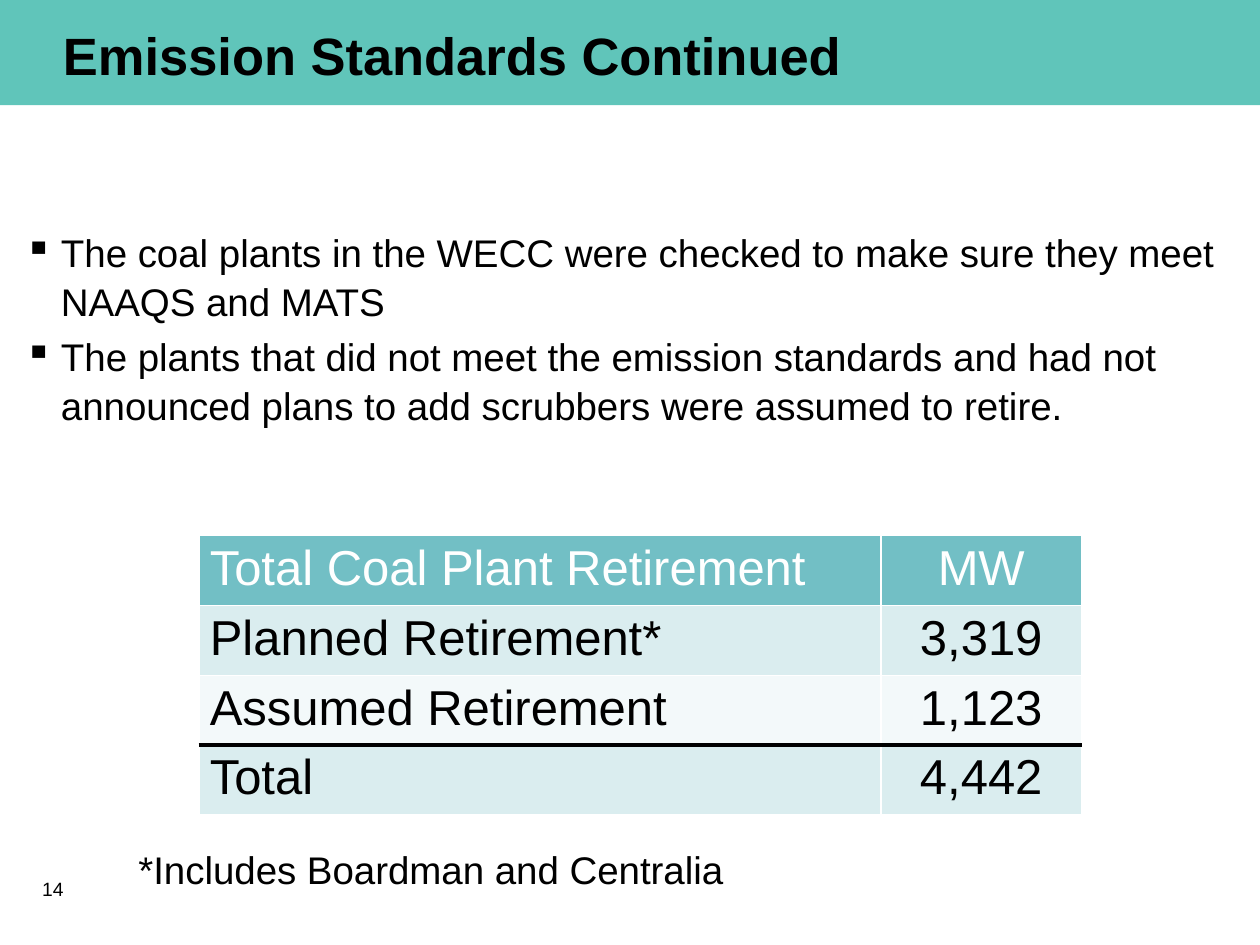
import pptx
import pptx.dml.color
import pptx.enum.shapes
import pptx.enum.text
import pptx.oxml
import pptx.oxml.ns
import pptx.util
from lxml import etree
from pptx.util import Cm

TITLE = "Emission Standards Continued"
BULLETS = [
    "The coal plants in the WECC were checked to make sure they meet NAAQS and MATS",
    "The plants that did not meet the emission standards and had not announced plans to add scrubbers were assumed to retire.",
]
RETIREMENTS = [
    ("Total Coal Plant Retirement", "MW"),
    ("Planned Retirement*", "3,319"),
    ("Assumed Retirement", "1,123"),
    ("Total", "4,442"),
]
FOOTNOTE = "*Includes Boardman and Centralia"
PAGE_NUMBER = "14"

THEME = {
    "font": "Arial",
    "text": "000000",
    "white": "FFFFFF",
    "banner": "60C5BA",
    "header": "72BFC5",
    "bands": ("DAEDEF", "F3F9FA"),
    "title_size": 30,
    "table_size": 28,
    "body_size": 22,
    "number_size": 11,
}
INSETS = (Cm(0.21), Cm(0.11))
COLUMN_WIDTHS = (Cm(13.74), Cm(4.04))
ROW_HEIGHT = Cm(1.35)
BULLET_INDENT = Cm(0.74)
MIDDLE = pptx.enum.text.MSO_ANCHOR.MIDDLE


def color(name):
    return pptx.dml.color.RGBColor.from_string(name)


def style(paragraph, size, ink=THEME["text"], bold=False):
    paragraph.font.name = THEME["font"]
    paragraph.font.size = pptx.util.Pt(size)
    paragraph.font.color.rgb = color(ink)
    paragraph.font.bold = bold


def set_insets(target, insets):
    target.margin_left = target.margin_right = insets[0]
    target.margin_top = target.margin_bottom = insets[1]


def add_text(slide, box, lines, size, bold=False, insets=INSETS, anchor=None):
    frame = slide.shapes.add_textbox(*map(Cm, box)).text_frame
    frame.word_wrap = True
    frame.vertical_anchor = anchor
    set_insets(frame, insets)
    frame.text = "\n".join(lines)
    for paragraph in frame.paragraphs:
        style(paragraph, size, bold=bold)
    return frame


def add_bullets(slide):
    box = (0.28, 4.45, 24.84, 5.92)
    frame = add_text(slide, box, BULLETS, THEME["body_size"])
    for index, paragraph in enumerate(frame.paragraphs):
        paragraph.line_spacing = 1.06
        if index:
            paragraph.space_before = pptx.util.Pt(3.5)
        properties = paragraph._p.get_or_add_pPr()
        properties.set("marL", str(BULLET_INDENT))
        properties.set("indent", str(-BULLET_INDENT))
        bullet = pptx.oxml.parse_xml(
            f'<a:buChar {pptx.oxml.ns.nsdecls("a")} char="▪"/>'
        )
        properties.find(pptx.oxml.ns.qn("a:defRPr")).addprevious(bullet)


def set_border(cell, side, ink, points):
    border = pptx.oxml.parse_xml(
        f'<a:ln{side} {pptx.oxml.ns.nsdecls("a")} w="{pptx.util.Pt(points)}">'
        f'<a:solidFill><a:srgbClr val="{ink}"/></a:solidFill></a:ln{side}>'
    )
    cell._tc.get_or_add_tcPr().append(border)


def add_retirement_table(slide):
    row_count = len(RETIREMENTS)
    table = slide.shapes.add_table(
        row_count, len(COLUMN_WIDTHS), Cm(4.02), Cm(10.8),
        sum(COLUMN_WIDTHS), ROW_HEIGHT * row_count,
    ).table
    for column, width in zip(table.columns, COLUMN_WIDTHS):
        column.width = width
    for row_index, values in enumerate(RETIREMENTS):
        table.rows[row_index].height = ROW_HEIGHT
        is_header = row_index == 0
        fill = THEME["header"] if is_header else THEME["bands"][(row_index - 1) % 2]
        total_sides = {row_count - 2: "B", row_count - 1: "T"}
        for column_index, value in enumerate(values):
            cell = table.cell(row_index, column_index)
            cell.text = value
            set_insets(cell, INSETS)
            paragraph = cell.text_frame.paragraphs[0]
            style(paragraph, THEME["table_size"], THEME["white" if is_header else "text"])
            if column_index:
                paragraph.alignment = pptx.enum.text.PP_ALIGN.CENTER
            for side in "LRTB":
                if side == total_sides.get(row_index):
                    set_border(cell, side, THEME["text"], 3)
                else:
                    set_border(cell, side, THEME["white"], 1)
            cell.fill.solid()
            cell.fill.fore_color.rgb = color(fill)


def main():
    presentation = pptx.Presentation()
    presentation.slide_width, presentation.slide_height = Cm(25.4), Cm(19.05)
    slide = presentation.slides.add_slide(presentation.slide_layouts[6])

    banner = slide.shapes.add_shape(
        pptx.enum.shapes.MSO_SHAPE.RECTANGLE, 0, 0, presentation.slide_width, Cm(2.12)
    )
    banner.shadow.inherit = False
    banner.fill.solid()
    banner.fill.fore_color.rgb = color(THEME["banner"])
    banner.line.fill.background()

    add_text(slide, (1.06, 0.16, 22.86, 1.88), [TITLE], THEME["title_size"],
             bold=True, anchor=MIDDLE)
    add_bullets(slide)
    add_text(slide, (0.64, 17.57, 5.93, 1.32), [PAGE_NUMBER], THEME["number_size"])
    add_retirement_table(slide)
    add_text(slide, (2.54, 16.93, 20.11, 1.2), [FOOTNOTE], THEME["body_size"],
             insets=(Cm(0.25), Cm(0.13)))
    presentation.save("out.pptx")


if __name__ == "__main__":
    main()
